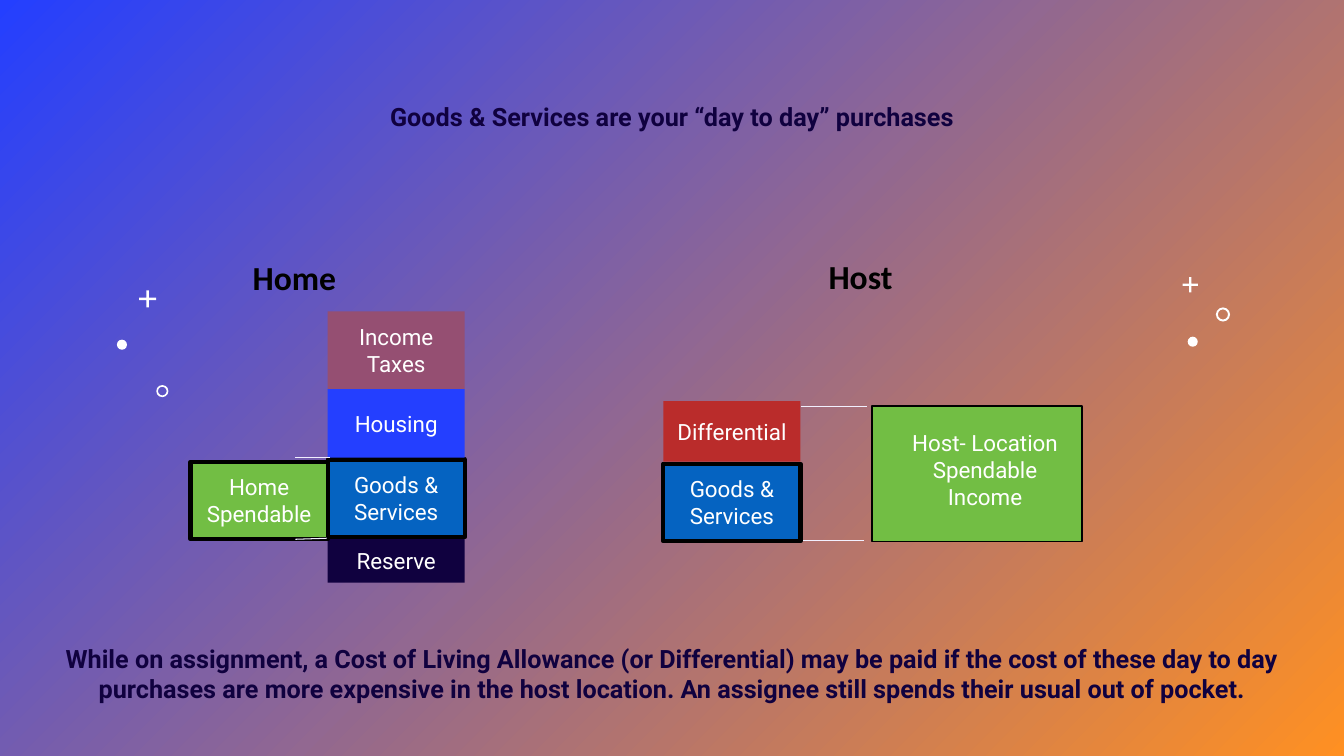
from dataclasses import dataclass

from lxml import etree
from pptx import Presentation
from pptx.dml.color import RGBColor
from pptx.enum.shapes import MSO_CONNECTOR, MSO_SHAPE
from pptx.enum.text import MSO_ANCHOR, MSO_AUTO_SIZE, PP_ALIGN
from pptx.oxml.ns import qn
from pptx.util import Inches, Pt

RECT = MSO_SHAPE.RECTANGLE
OVAL = MSO_SHAPE.OVAL
CROSS = MSO_SHAPE.CROSS
DONUT = MSO_SHAPE.DONUT
STRAIGHT = MSO_CONNECTOR.STRAIGHT
TOP = MSO_ANCHOR.TOP
MIDDLE = MSO_ANCHOR.MIDDLE
CENTER = PP_ALIGN.CENTER
NO_FIT = MSO_AUTO_SIZE.NONE
TITLE_ONLY = 5


@dataclass(frozen=True)
class Theme:
    blue: str = "243FFF"
    orange: str = "FF9022"
    navy: str = "10013F"
    green: str = "72BE44"
    red: str = "BA2C2B"
    plum: str = "954F72"
    azure: str = "0563C1"
    white: str = "FFFFFF"
    black: str = "000000"
    pale: str = "F2F0FF"
    font: str = "Roboto"
    heading_font: str = "Calibri"
    heading: int = 24
    statement: int = 18
    label: int = 16


THEME = Theme()
BLOCK_W = 1.36
BLOCK_H = 0.77
HOME_X = 3.25
HOST_X = 6.58


def rgb(value):
    return RGBColor.from_string(value)


def place(sp, x, y, w, h):
    sp.left, sp.top, sp.width, sp.height = map(Inches, (x, y, w, h))


def write(sp, lines, size, color, font=THEME.font, bold=False, anchor=TOP, wrap=True):
    tf = sp.text_frame
    tf.text = "\n".join(lines)
    tf.word_wrap = wrap
    tf.auto_size = NO_FIT
    tf.vertical_anchor = anchor
    for p in tf.paragraphs:
        p.alignment = CENTER
        p.font.name = font
        p.font.size = Pt(size)
        p.font.bold = bold
        p.font.color.rgb = rgb(color)


def add_filled(slide, kind, x, y, w, h, fill, border=0):
    sp = slide.shapes.add_shape(kind, *map(Inches, (x, y, w, h)))
    sp.shadow.inherit = False
    sp.fill.solid()
    sp.fill.fore_color.rgb = rgb(fill)
    if border:
        sp.line.color.rgb = rgb(THEME.black)
        sp.line.width = Pt(border)
    else:
        sp.line.fill.background()
    return sp


def add_block(slide, lines, x, y, h, fill, border=0):
    sp = add_filled(slide, RECT, x, y, BLOCK_W, h, fill, border)
    write(sp, lines, THEME.label, THEME.white, anchor=MIDDLE, wrap=False)


def add_text(slide, text, x, y, w, h, size, color, font=THEME.font):
    sp = slide.shapes.add_textbox(*map(Inches, (x, y, w, h)))
    write(sp, [text], size, color, font, bold=True)


def add_line(slide, x1, y1, x2, y2):
    line = slide.shapes.add_connector(STRAIGHT, *map(Inches, (x1, y1, x2, y2)))
    line.line.color.rgb = rgb(THEME.pale)
    line.line.width = Pt(0.75)
    etree.SubElement(line._element.spPr, qn("a:effectLst"))


def add_ornament(slide, kind, x, y, size, adjustment=None):
    sp = add_filled(slide, kind, x, y, size, size, THEME.white)
    if adjustment is not None:
        sp.adjustments[0] = adjustment


def set_background(slide):
    fill = slide.background.fill
    fill.gradient()
    fill.gradient_angle = 315
    for stop, color, position in zip(fill.gradient_stops, (THEME.blue, THEME.orange), (0, 1)):
        stop.color.rgb = rgb(color)
        stop.position = position


def add_ornaments(slide):
    for kind, x, y, size, adjustment in (
        (OVAL, 11.78, 3.34, 0.1, None),
        (CROSS, 11.73, 2.75, 0.15, 0.43),
        (DONUT, 12.06, 3.05, 0.14, 0.14),
        (CROSS, 1.38, 2.88, 0.17, 0.43),
        (OVAL, 1.16, 3.37, 0.1, None),
        (DONUT, 1.55, 3.82, 0.12, 0.14),
    ):
        add_ornament(slide, kind, x, y, size, adjustment)


def add_host(slide):
    add_text(slide, "Host", 7.53, 2.49, 2.01, 0.5, THEME.heading, THEME.black, THEME.heading_font)
    add_filled(slide, RECT, 8.65, 4.03, 2.08, 1.34, THEME.green, 1)
    income = add_filled(slide, RECT, 8.84, 4.21, 1.86, 0.91, THEME.green)
    write(income, ["Host- Location Spendable Income"], THEME.label, THEME.white)
    add_line(slide, 7.94, 4.03, 8.6, 4.03)
    add_line(slide, 7.93, 5.36, 8.57, 5.36)
    add_block(slide, ["Differential"], HOST_X, 3.98, 0.6, THEME.red)
    add_block(slide, ["Goods &", "Services"], HOST_X, 4.6, BLOCK_H, THEME.azure, 3)


def add_home(slide):
    add_text(slide, "Home", 2.3, 2.5, 1.24, 0.5, THEME.heading, THEME.black, THEME.heading_font)
    for lines, x, y, h, fill, border in (
        (["Income", "Taxes"], HOME_X, 3.09, BLOCK_H, THEME.plum, 0),
        (["Goods &", "Services"], HOME_X, 4.56, BLOCK_H, THEME.azure, 3),
        (["Housing"], HOME_X, 3.86, 0.68, THEME.blue, 0),
        (["Reserve"], HOME_X, 5.35, 0.43, THEME.navy, 0),
        (["Home", "Spendable"], HOME_X - BLOCK_W, 4.58, BLOCK_H, THEME.green, 3),
    ):
        add_block(slide, lines, x, y, h, fill, border)
    add_line(slide, 2.93, 4.54, 3.27, 4.54)
    add_line(slide, 2.93, 5.35, 3.24, 5.34)


def main():
    prs = Presentation()
    prs.slide_width = Inches(13.33)
    prs.slide_height = Inches(7.5)
    slide = prs.slides.add_slide(prs.slide_layouts[TITLE_ONLY])
    set_background(slide)
    title = slide.shapes.title
    place(title, 0, 0.96, 13.33, 0.4)
    write(title, ["Goods & Services are your “day to day” purchases"],
          THEME.statement, THEME.navy, bold=True)
    add_ornaments(slide)
    add_host(slide)
    add_home(slide)
    add_text(slide, "While on assignment, a Cost of Living Allowance (or Differential) may be paid "
             "if the cost of these day to day purchases are more expensive in the host location. "
             "An assignee still spends their usual out of pocket.",
             0, 6.33, 13.33, 1.01, THEME.statement, THEME.navy)
    prs.save("out.pptx")


if __name__ == "__main__":
    main()
